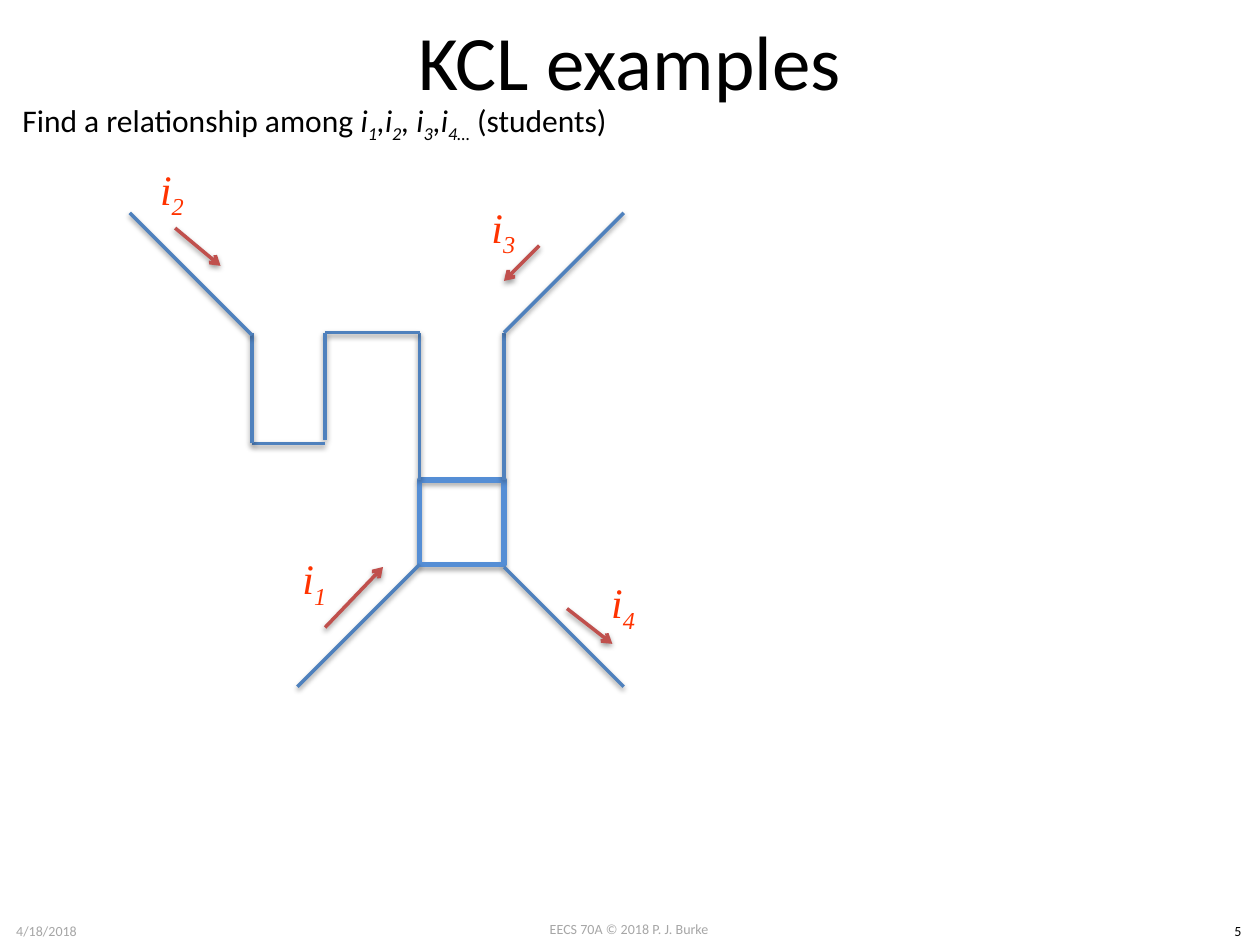
import pptx
import pptx.util
import pptx.dml.color
import pptx.enum.shapes
import pptx.enum.text
import pptx.oxml
import pptx.oxml.ns

Inches = pptx.util.Inches
Pt = pptx.util.Pt
ALIGN = pptx.enum.text.PP_ALIGN
ANCHOR = pptx.enum.text.MSO_ANCHOR

WIRE, ARROW, BOX = "4F81BD", "C0504D", "558ED5"
BLACK, GRAY, LABEL = "000000", "A6A6A6", "FF3300"

TITLE = "KCL examples"
QUESTION = [
    ("Find a relationship among ", ""),
    ("i", "italic"), ("1", "sub"), (",i", "italic"), ("2", "sub"),
    (", i", "italic"), ("3", "sub"), (",i", "italic"), ("4…", "sub"),
    (" (students)", ""),
]
FOOTERS = [
    ("EECS 70A © 2018 P. J. Burke", (3.83, 7.26, 2.33, 0.24), GRAY),
    ("4/18/2018", (0, 7.27, 0.74, 0.24), GRAY),
    ("5", (9.65, 7.27, 0.35, 0.24), BLACK),
]
CURRENTS = [
    ("1", (2.11, 4.31), (2.58, 4.98), (3.04, 4.5)),
    ("2", (0.98, 1.22), (1.39, 1.81), (1.75, 2.11)),
    ("3", (3.61, 1.52), (4.28, 1.95), (4, 2.23)),
    ("4", (4.56, 4.5), (4.5, 4.83), (4.86, 5.11)),
]
NODE = (3.33, 3.81, 0.67, 0.67)
WIRES = [
    [(3.33, 4.48), (2.36, 5.45)],
    [(4, 4.5), (4.95, 5.45)],
    [(4, 3.81), (4, 2.64), (4.95, 1.69)],
    [(3.33, 3.81), (3.33, 2.64), (2.58, 2.64), (2.58, 3.49)],
    [(2.58, 3.52), (2, 3.52), (2, 2.64)],
    [(2, 2.66), (1.03, 1.69)],
]


def rgb(color):
    return pptx.dml.color.RGBColor.from_string(color)


def add_shadow(sp, opacity, distance):
    ns = pptx.oxml.ns.nsdecls("a")
    sp._element.spPr.append(pptx.oxml.parse_xml(
        f'<a:effectLst {ns}><a:outerShdw blurRad="{Pt(3.1)}" dist="{Pt(distance)}" '
        f'dir="5400000" rotWithShape="0"><a:srgbClr val="{BLACK}">'
        f'<a:alpha val="{opacity * 1000}"/></a:srgbClr></a:outerShdw></a:effectLst>'))


def add_line(slide, start, end, color, arrow=False):
    line = slide.shapes.add_connector(
        pptx.enum.shapes.MSO_CONNECTOR.STRAIGHT, *map(Inches, start + end))
    line.line.color.rgb = rgb(color)
    line.line.width = Pt(2)
    if arrow:
        ns = pptx.oxml.ns.nsdecls("a")
        line.line._get_or_add_ln().append(
            pptx.oxml.parse_xml(f'<a:tailEnd {ns} type="arrow"/>'))
    add_shadow(line, 38, 1.6)


def write(sp, parts, size, color, font="Calibri", align=ALIGN.CENTER,
          anchor=ANCHOR.TOP, wrap=True):
    tf = sp.text_frame
    tf.word_wrap = wrap
    tf.vertical_anchor = anchor
    p = tf.paragraphs[0]
    p.alignment = align
    for text, style in parts:
        r = p.add_run()
        r.text = text
        r.font.size = Pt(size)
        r.font.name = font
        r.font.color.rgb = rgb(color)
        if style:
            r.font.italic = True
        if style == "sub":
            r.font._element.set("baseline", "-25000")


def add_text(slide, box, parts, size, color, **options):
    write(slide.shapes.add_textbox(*map(Inches, box)), parts, size, color, **options)


def main():
    prs = pptx.Presentation()
    prs.slide_width, prs.slide_height = Inches(10), Inches(7.5)
    slide = prs.slides.add_slide(prs.slide_layouts[5])

    title = slide.shapes.title
    title.left, title.top, title.width, title.height = map(Inches, (0.5, 0, 9, 0.95))
    write(title, [(TITLE, "")], 44, BLACK, anchor=ANCHOR.MIDDLE)
    add_text(slide, (0.08, 0.75, 4.96, 0.4), QUESTION, 18, BLACK,
             align=ALIGN.LEFT, wrap=False)
    for text, box, color in FOOTERS:
        add_text(slide, box, [(text, "")], 8, color)

    node = slide.shapes.add_shape(
        pptx.enum.shapes.MSO_SHAPE.RECTANGLE, *map(Inches, NODE))
    node.fill.background()
    node.line.color.rgb = rgb(BOX)
    node.line.width = Pt(3)
    add_shadow(node, 35, 1.8)

    for wire in WIRES:
        for start, end in zip(wire, wire[1:]):
            add_line(slide, start, end, WIRE)

    for number, corner, start, end in CURRENTS:
        add_line(slide, start, end, ARROW, arrow=True)
        add_text(slide, corner + (0.77, 0.61), [("i", "italic"), (number, "sub")],
                 24, LABEL, font="Times New Roman", anchor=ANCHOR.MIDDLE)

    prs.save("out.pptx")


if __name__ == "__main__":
    main()
